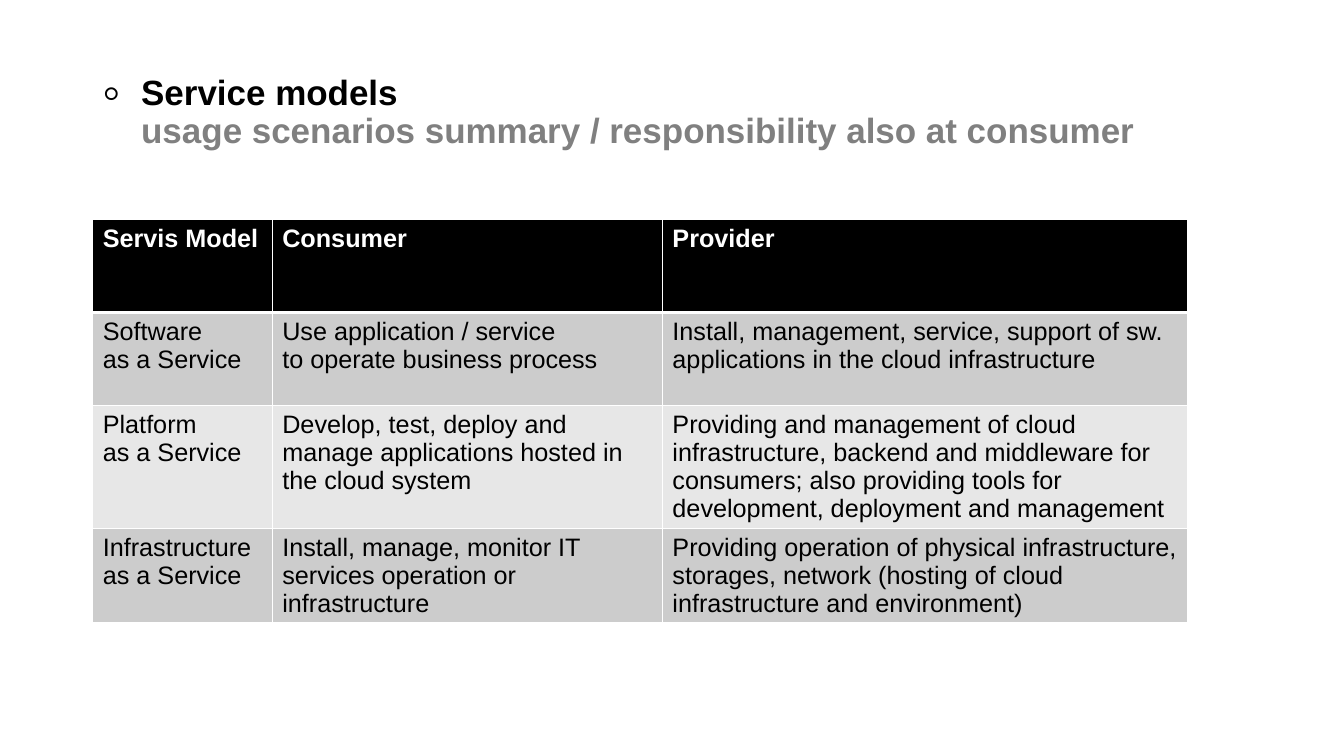
from dataclasses import dataclass

from lxml.etree import SubElement
from pptx import Presentation
from pptx.dml.color import RGBColor
from pptx.enum.text import MSO_ANCHOR, PP_ALIGN
from pptx.oxml.ns import qn
from pptx.util import Inches, Pt


@dataclass(frozen=True)
class Theme:
    font: str = "Arial"
    title_size: int = 25
    table_size: int = 18
    ink: str = "000000"
    muted: str = "808080"
    paper: str = "FFFFFF"
    bands: tuple = ("CCCCCC", "E7E7E7")
    rule: int = 1
    header_rule: int = 3


class SlideBuilder:
    def __init__(self, slide, theme):
        self.slide = slide
        self.theme = theme

    def add_run(self, paragraph, text, size, color, bold=False):
        run = paragraph.add_run()
        run.text = text
        run.font.name = self.theme.font
        run.font.size = Pt(size)
        run.font.bold = bold
        run.font.color.rgb = RGBColor.from_string(color)

    def add_title(self, heading, subheading, left, top, width, height):
        title = self.slide.shapes.title
        title.left, title.top = Inches(left), Inches(top)
        title.width, title.height = Inches(width), Inches(height)
        frame = title.text_frame
        frame.word_wrap = True
        frame.vertical_anchor = MSO_ANCHOR.MIDDLE
        paragraph = frame.paragraphs[0]
        paragraph.alignment = PP_ALIGN.LEFT
        paragraph.line_spacing = 0.9
        properties = paragraph._p.get_or_add_pPr()
        properties.set("marL", str(Inches(0.38)))
        properties.set("indent", str(Inches(-0.38)))
        SubElement(properties, qn("a:buSzPct"), val="150000")
        SubElement(properties, qn("a:buFont"), typeface=self.theme.font)
        SubElement(properties, qn("a:buChar"), char="◦")
        size = self.theme.title_size
        self.add_run(paragraph, heading, size, self.theme.ink, True)
        paragraph.add_line_break()
        self.add_run(paragraph, subheading, size, self.theme.muted, True)

    def add_border(self, cell, side, width):
        line = SubElement(cell._tc.get_or_add_tcPr(), qn(f"a:ln{side}"), w=str(Pt(width)))
        fill = SubElement(line, qn("a:solidFill"))
        SubElement(fill, qn("a:srgbClr"), val=self.theme.paper)

    def fill_cell(self, cell, text, row):
        theme = self.theme
        is_header = row == 0
        for side in "LRTB":
            meets_header = (row, side) in ((0, "B"), (1, "T"))
            self.add_border(cell, side, theme.header_rule if meets_header else theme.rule)
        cell.fill.solid()
        fill = theme.ink if is_header else theme.bands[(row - 1) % 2]
        cell.fill.fore_color.rgb = RGBColor.from_string(fill)
        frame = cell.text_frame
        for index, line in enumerate(text.split("\n")):
            paragraph = frame.add_paragraph() if index else frame.paragraphs[0]
            color = theme.paper if is_header else theme.ink
            self.add_run(paragraph, line, theme.table_size, color, is_header)

    def add_table(self, rows, left, top, column_widths, row_height):
        table = self.slide.shapes.add_table(
            len(rows), len(column_widths), Inches(left), Inches(top),
            Inches(sum(column_widths)), Inches(row_height * len(rows)),
        ).table
        for column, width in zip(table.columns, column_widths):
            column.width = Inches(width)
        for row, texts in enumerate(rows):
            table.rows[row].height = Inches(row_height)
            for column, text in enumerate(texts):
                self.fill_cell(table.cell(row, column), text, row)


SERVICE_MODELS = [
    ("Servis Model", "Consumer", "Provider"),
    (
        "Software\nas a Service",
        "Use application / service\nto operate business process",
        "Install, management, service, support of sw. applications in the cloud infrastructure",
    ),
    (
        "Platform\nas a Service",
        "Develop, test, deploy and manage applications hosted in the cloud system",
        "Providing and management of cloud infrastructure, backend and middleware for consumers; "
        "also providing tools for development, deployment and management",
    ),
    (
        "Infrastructure\nas a Service",
        "Install, manage, monitor IT services operation or infrastructure",
        "Providing operation of physical infrastructure, storages, network "
        "(hosting of cloud infrastructure and environment)",
    ),
]


def main():
    presentation = Presentation()
    presentation.slide_width = Inches(13.33)
    presentation.slide_height = Inches(7.5)
    slide = presentation.slides.add_slide(presentation.slide_layouts[5])
    builder = SlideBuilder(slide, Theme())
    builder.add_title(
        "Service models",
        "usage scenarios summary / responsibility also at consumer",
        0.92, 0.4, 11.5, 1.45,
    )
    builder.add_table(SERVICE_MODELS, 0.92, 2.18, (1.78, 3.87, 5.21), 0.92)
    presentation.save("out.pptx")


if __name__ == "__main__":
    main()
